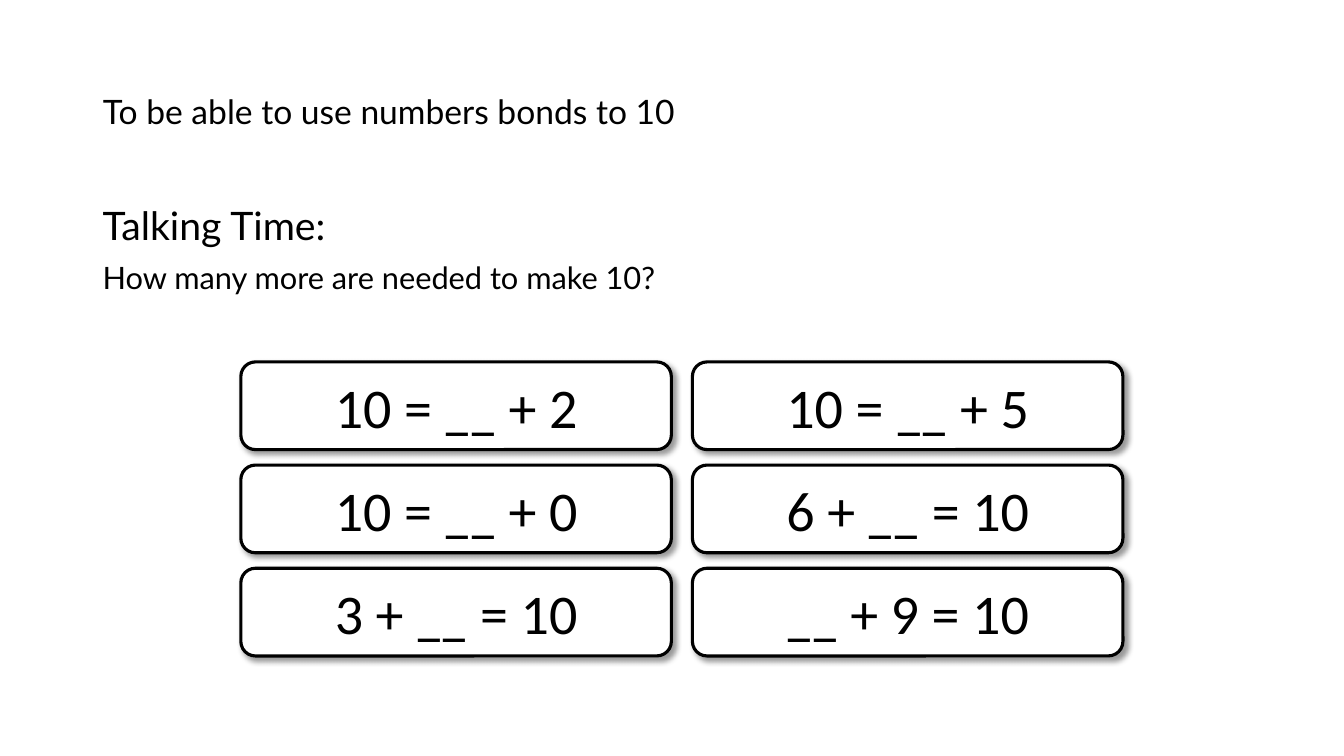
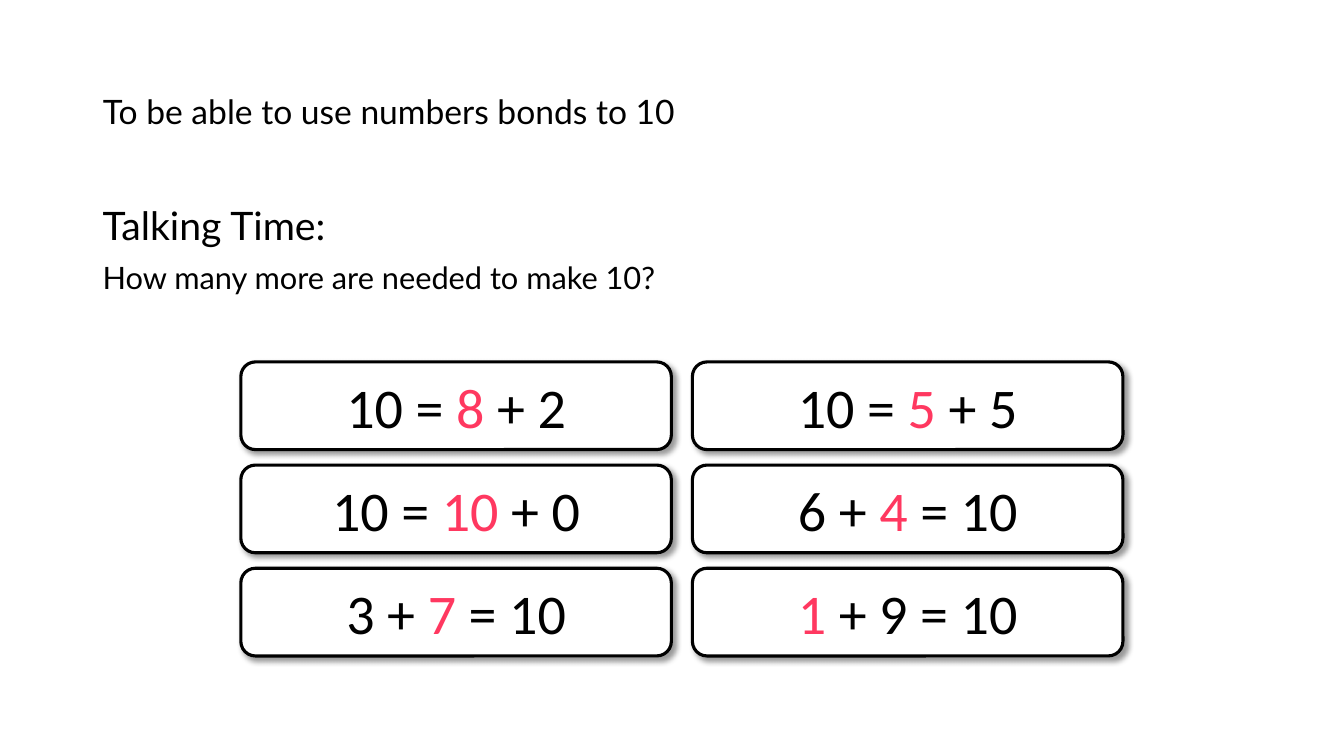
from lxml import etree
from pptx import Presentation
from pptx.dml.color import RGBColor
from pptx.enum.shapes import MSO_SHAPE
from pptx.enum.text import MSO_ANCHOR, MSO_AUTO_SIZE, PP_ALIGN
from pptx.oxml.ns import qn
from pptx.util import Cm, Pt

ROUNDED = MSO_SHAPE.ROUNDED_RECTANGLE
MIDDLE = MSO_ANCHOR.MIDDLE
NO_FIT = MSO_AUTO_SIZE.NONE
LEFT = PP_ALIGN.LEFT
CENTER = PP_ALIGN.CENTER

BLACK = "000000"
WHITE = "FFFFFF"
PINK = "FF3860"
TEXT_FONT = "Lato"
SUM_FONT = "Calibri"
TITLE_ONLY = 5

TITLE = "To be able to use numbers bonds to 10"
PROMPT = [("Talking Time:", 28), ("How many more are needed to make 10?", 22)]
BLANK = "__"
SUMS = [
    [("10 = ", "8", " + 2"), ("10 = ", "5", " + 5")],
    [("10 = ", "10", " + 0"), ("6 + ", "4", " = 10")],
    [("3 + ", "7", " = 10"), ("", "1", " + 9 = 10")],
]


def color(value):
    return RGBColor.from_string(value)


class Deck:
    margin = 2.34
    card_left, card_top = 6.07, 9.12
    card_width, card_height = 10.85, 2.21
    column_step, row_step = 11.38, 2.6

    def __init__(self):
        self.presentation = Presentation()
        self.presentation.slide_width = Cm(33.87)
        self.presentation.slide_height = Cm(19.05)
        self.slide = None

    def add_slide(self):
        layout = self.presentation.slide_layouts[TITLE_ONLY]
        self.slide = self.presentation.slides.add_slide(layout)

    def style(self, run, size, font=TEXT_FONT, ink=BLACK):
        run.font.name = font
        run.font.size = Pt(size)
        run.font.color.rgb = color(ink)

    def fill_paragraph(self, paragraph, text, size):
        paragraph.text = text
        paragraph.alignment = LEFT
        paragraph.line_spacing = 0.9
        self.style(paragraph.runs[0], size)

    def title(self, text):
        shape = self.slide.shapes.title
        shape.left, shape.top = Cm(self.margin), Cm(1.02)
        shape.width, shape.height = Cm(24.38), Cm(3.68)
        frame = shape.text_frame
        frame.auto_size = NO_FIT
        frame.vertical_anchor = MIDDLE
        self.fill_paragraph(frame.paragraphs[0], text, 24)

    def prompt(self, lines):
        shape = self.slide.shapes.add_textbox(
            Cm(self.margin), Cm(5.08), Cm(29.21), Cm(12.95))
        frame = shape.text_frame
        frame.word_wrap = True
        for index, (text, size) in enumerate(lines):
            paragraph = frame.add_paragraph() if index else frame.paragraphs[0]
            self.fill_paragraph(paragraph, text, size)
            if index:
                paragraph.space_before = Pt(10)

    def shadow(self, shape):
        shape.shadow.inherit = False
        effects = shape.element.spPr.find(qn("a:effectLst"))
        outer = etree.SubElement(
            effects, qn("a:outerShdw"), blurRad=str(Pt(4)), dist=str(Pt(3)),
            dir="2700000", algn="tl", rotWithShape="0")
        shade = etree.SubElement(outer, qn("a:srgbClr"), val=BLACK)
        etree.SubElement(shade, qn("a:alpha"), val="40000")

    def card(self, row, column, parts):
        shape = self.slide.shapes.add_shape(
            ROUNDED,
            Cm(self.card_left + column * self.column_step),
            Cm(self.card_top + row * self.row_step),
            Cm(self.card_width), Cm(self.card_height))
        shape.fill.solid()
        shape.fill.fore_color.rgb = color(WHITE)
        shape.line.color.rgb = color(BLACK)
        shape.line.width = Pt(2.25)
        self.shadow(shape)
        frame = shape.text_frame
        frame.vertical_anchor = MIDDLE
        paragraph = frame.paragraphs[0]
        paragraph.alignment = CENTER
        for text, font, ink in parts:
            if text:
                run = paragraph.add_run()
                run.text = text
                self.style(run, 40, font, ink)

    def sums(self, answered):
        for row, pair in enumerate(SUMS):
            for column, (before, answer, after) in enumerate(pair):
                gap = (answer, SUM_FONT, PINK) if answered else (BLANK, TEXT_FONT, BLACK)
                self.card(row, column, [
                    (before, SUM_FONT, BLACK), gap, (after, SUM_FONT, BLACK)])


def main():
    deck = Deck()
    for answered in (False, True):
        deck.add_slide()
        deck.title(TITLE)
        deck.prompt(PROMPT)
        deck.sums(answered)
    deck.presentation.save("out.pptx")


if __name__ == "__main__":
    main()
